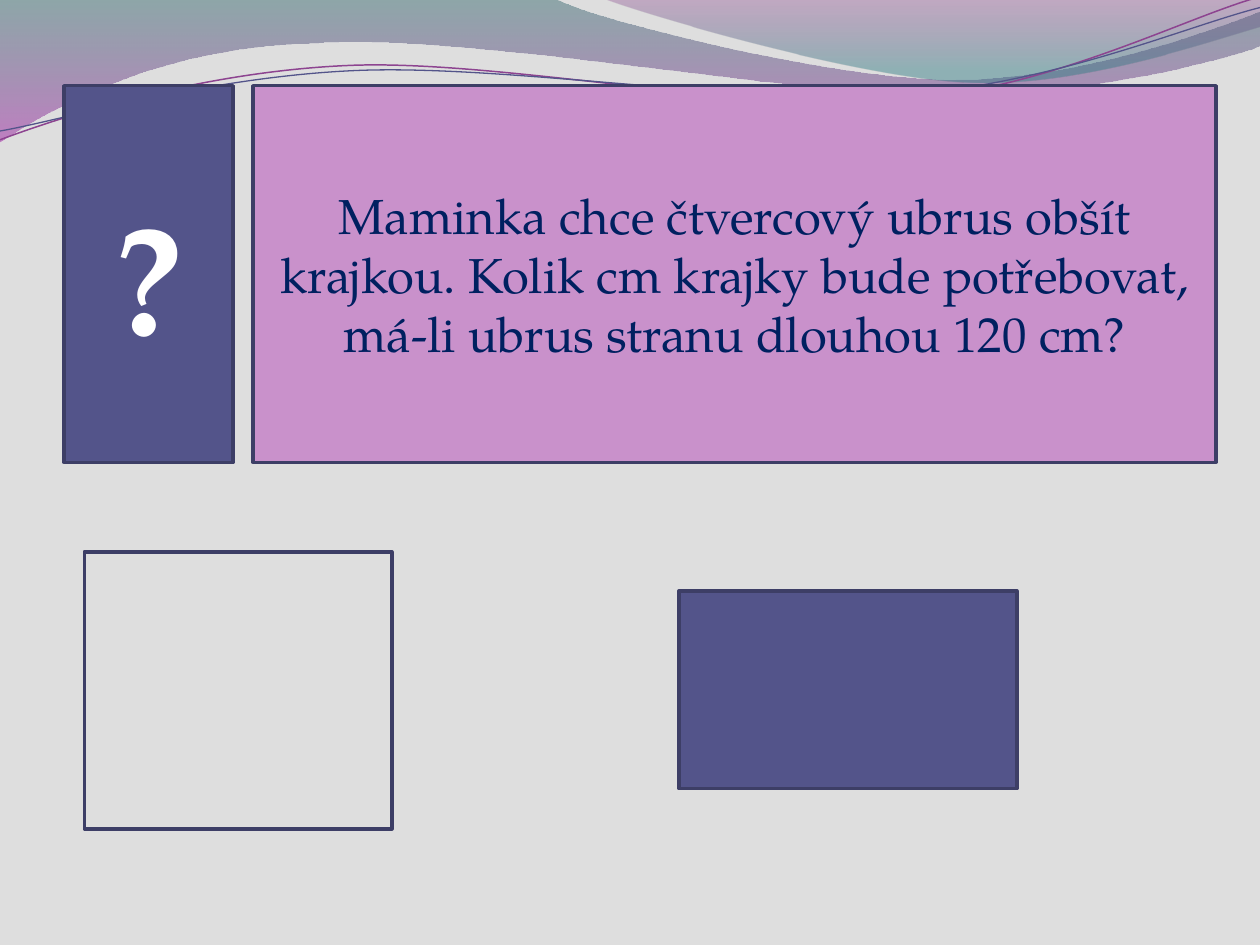
from lxml import etree
from pptx import Presentation
from pptx.dml.color import RGBColor
from pptx.enum.shapes import MSO_SHAPE
from pptx.enum.text import MSO_ANCHOR, PP_ALIGN
from pptx.oxml.ns import qn
from pptx.util import Inches, Pt

RECTANGLE = MSO_SHAPE.RECTANGLE
MIDDLE = MSO_ANCHOR.MIDDLE
CENTER = PP_ALIGN.CENTER

FONT = "TeX Gyre Pagella"
COLORS = {
    "background": "DEDEDE", "indigo": "53548A", "outline": "3D3E66",
    "pink": "C991CB", "navy": "002060", "white": "FFFFFF", "purple": "8D4490",
}

# Each segment holds one end point, or two control points and an end point.
# Gradient stops: position %, colour, opacity %.
WAVES = [
    {"start": (0, 0),
     "segments": [
         [(4.4, -0.01)],
         [(4.76, 0.17), (6.64, 0.63), (7.58, 0.63)],
         [(8.53, 0.63), (9.58, 0.26), (10, 0.09)],
         [(10.01, 0.36)],
         [(9.83, 0.44), (8.7, 0.76), (7.46, 0.75)],
         [(6.22, 0.75), (3.82, 0.28), (2.57, 0.34)],
         [(1.29, 0.36), (0.46, 0.83), (-0.01, 1.13)],
         [(0, 0)]],
     "gradient": [(0, "2D6368", 45), (100, "A530A9", 55)]},
    {"start": (4.79, -0.01),
     "segments": [
         [(5.09, 0.11), (6.82, 0.62), (7.69, 0.65)],
         [(8.56, 0.69), (9.61, 0.32), (10, 0.21)],
         [(10, 0)],
         [(4.79, -0.01)]],
     "gradient": [(0, "7F2F82", 30), (80, "2F7B82", 45)]},
    {"start": (0, 1.11),
     "segments": [
         [(0.48, 0.93), (1.58, 0.57), (2.77, 0.52)],
         [(3.95, 0.47), (5.93, 0.89), (7.13, 0.8)],
         [(8.33, 0.71), (9.38, 0.15), (9.98, -0.02)]],
     "line": ("purple", 0.85)},
    {"start": (0, 1.04),
     "segments": [
         [(0.47, 0.96), (1.64, 0.61), (2.83, 0.56)],
         [(4.03, 0.51), (5.97, 0.84), (7.17, 0.75)],
         [(8.36, 0.67), (9.41, 0.21), (10, 0.06)]],
     "line": ("indigo", 0.75)},
]

QUESTION = ("Maminka chce čtvercový ubrus obšít krajkou. Kolik cm krajky bude "
            "potřebovat, má-li ubrus stranu dlouhou 120 cm?")
BOXES = [
    {"place": (0.51, 0.68, 1.34, 2.99), "fill": "indigo", "text": "?",
     "font": {"size": Pt(88), "bold": True}, "color": "white"},
    {"place": (2.01, 0.68, 7.64, 2.99), "fill": "pink", "text": QUESTION,
     "font": {"size": Pt(28)}, "color": "navy"},
    {"place": (0.67, 4.38, 2.44, 2.2)},
    {"place": (5.39, 4.69, 2.68, 1.57), "fill": "indigo"},
]


def rgb(name):
    return RGBColor.from_string(COLORS[name])


def set_line(shape, color, width):
    shape.line.color.rgb = rgb(color)
    shape.line.width = Pt(width)


def bend_segments(shape, segments):
    """Join the straight steps of each three-point segment into one Bézier curve."""
    steps = iter(list(shape.element.iter(qn("a:lnTo"))))
    for segment in segments:
        parts = [next(steps) for _ in segment]
        if len(parts) == 3:
            curve = etree.Element(qn("a:cubicBezTo"))
            parts[0].addprevious(curve)
            for part in parts:
                curve.append(part[0])
                part.getparent().remove(part)


def set_gradient(shape, stops):
    """Fill from top to bottom with partly transparent colours."""
    gradient = etree.Element(qn("a:gradFill"), rotWithShape="1")
    stop_list = etree.SubElement(gradient, qn("a:gsLst"))
    for position, color, opacity in stops:
        stop = etree.SubElement(stop_list, qn("a:gs"), pos=str(position * 1000))
        color_element = etree.SubElement(stop, qn("a:srgbClr"), val=color)
        etree.SubElement(color_element, qn("a:alpha"), val=str(opacity * 1000))
    etree.SubElement(gradient, qn("a:lin"), ang="5400000", scaled="0")
    shape.element.spPr.find(qn("a:custGeom")).addnext(gradient)


def add_wave(slide, wave):
    start_x, start_y = map(Inches, wave["start"])
    points = [(Inches(x), Inches(y)) for segment in wave["segments"] for x, y in segment]
    builder = slide.shapes.build_freeform(start_x, start_y)
    builder.add_line_segments(points, close="gradient" in wave)
    shape = builder.convert_to_shape()
    bend_segments(shape, wave["segments"])
    shape.shadow.inherit = False
    if "gradient" in wave:
        set_gradient(shape, wave["gradient"])
        shape.line.fill.background()
    else:
        shape.fill.background()
        set_line(shape, *wave["line"])


def add_box(slide, box):
    shape = slide.shapes.add_shape(RECTANGLE, *map(Inches, box["place"]))
    shape.shadow.inherit = False
    set_line(shape, "outline", 2)
    if "fill" in box:
        shape.fill.solid()
        shape.fill.fore_color.rgb = rgb(box["fill"])
    else:
        shape.fill.background()
    if "text" in box:
        frame = shape.text_frame
        frame.word_wrap = True
        frame.vertical_anchor = MIDDLE
        paragraph = frame.paragraphs[0]
        paragraph.alignment = CENTER
        run = paragraph.add_run()
        run.text = box["text"]
        for attribute, value in {"name": FONT, **box["font"]}.items():
            setattr(run.font, attribute, value)
        run.font.color.rgb = rgb(box["color"])


def main():
    presentation = Presentation()
    presentation.slide_width = Inches(10)
    presentation.slide_height = Inches(7.5)
    slide = presentation.slides.add_slide(presentation.slide_layouts[6])
    slide.background.fill.solid()
    slide.background.fill.fore_color.rgb = rgb("background")
    for wave in WAVES:
        add_wave(slide, wave)
    for box in BOXES:
        add_box(slide, box)
    presentation.save("out.pptx")


if __name__ == "__main__":
    main()
